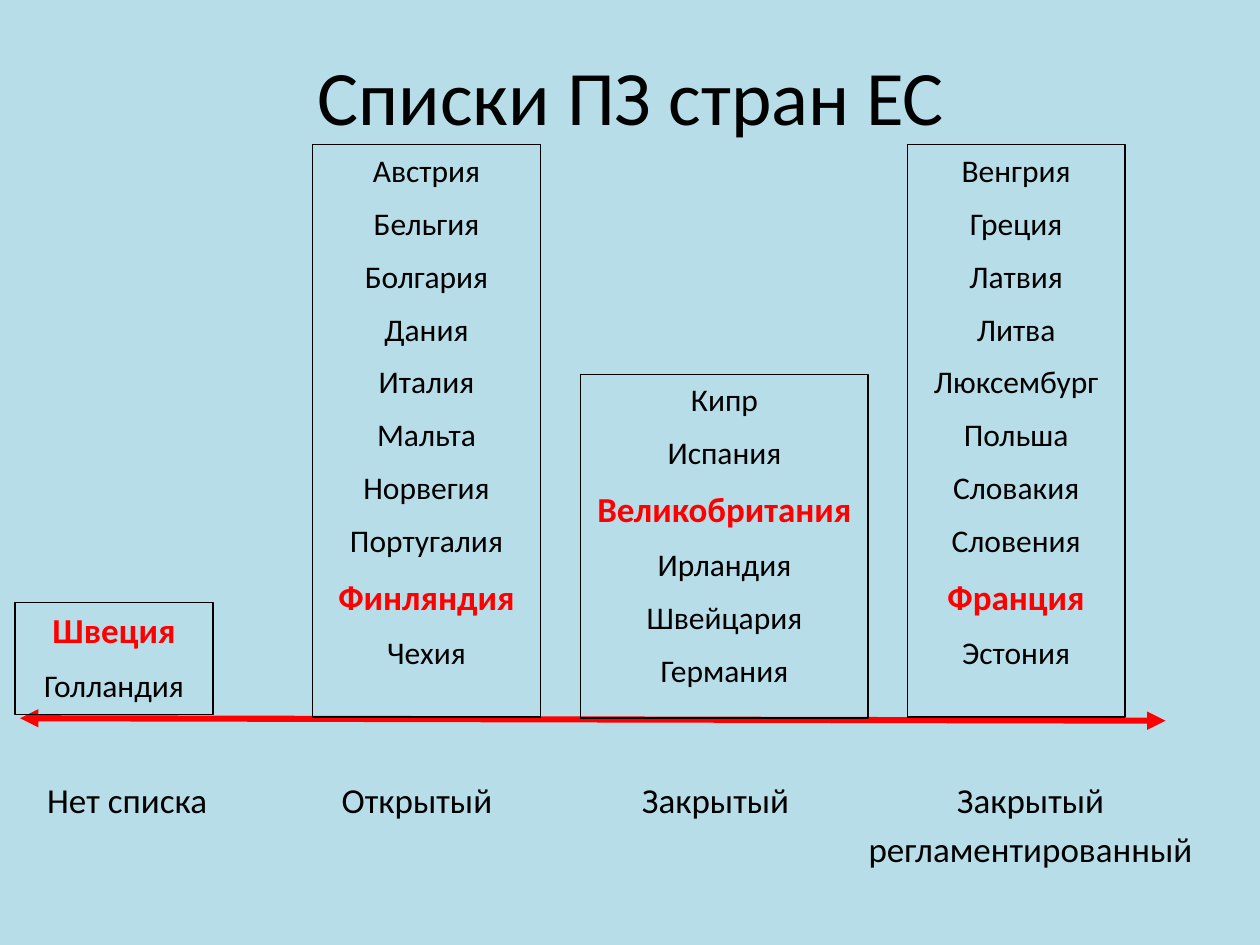
from dataclasses import dataclass

from lxml.etree import SubElement
from pptx import Presentation
from pptx.dml.color import RGBColor
from pptx.enum.shapes import MSO_CONNECTOR, MSO_SHAPE
from pptx.enum.text import MSO_ANCHOR, PP_ALIGN
from pptx.oxml.ns import qn
from pptx.util import Inches, Pt


@dataclass(frozen=True)
class Theme:
    font: str = "Calibri"
    background: RGBColor = RGBColor(0xB7, 0xDE, 0xE8)
    ink: RGBColor = RGBColor(0, 0, 0)
    accent: RGBColor = RGBColor(0xFF, 0, 0)
    title: int = 44
    label: int = 20
    country: int = 18
    highlight: int = 20
    border: float = 0.75
    axis: float = 3.5


THEME = Theme()
HIGHLIGHTED = {"Швеция", "Финляндия", "Великобритания", "Франция"}

# Left, top, width, height of each box, then its countries
COLUMNS = [
    (0.12, 4.78, 1.57, 0.89, ["Швеция", "Голландия"]),
    (2.48, 1.15, 1.81, 4.54,
     ["Австрия", "Бельгия", "Болгария", "Дания", "Италия", "Мальта",
      "Норвегия", "Португалия", "Финляндия", "Чехия"]),
    (7.2, 1.15, 1.73, 4.54,
     ["Венгрия", "Греция", "Латвия", "Литва", "Люксембург", "Польша",
      "Словакия", "Словения", "Франция", "Эстония"]),
    (4.61, 2.97, 2.28, 2.73,
     ["Кипр", "Испания", "Великобритания", "Ирландия", "Швейцария",
      "Германия"]),
]

# Centre of each axis label, then its lines
LABELS = [
    (1.01, ["Нет списка"]),
    (3.31, ["Открытый"]),
    (5.68, ["Закрытый"]),
    (8.18, ["Закрытый", "регламентированный"]),
]


def add_line(tf, text, first=False, size=18, color=THEME.ink, bold=False,
             gap=0.0):
    """Add a centred paragraph; gap is the space before, in type sizes."""
    p = tf.paragraphs[0] if first else tf.add_paragraph()
    p.alignment = PP_ALIGN.CENTER
    p.space_before = Pt(0 if first else round(gap * size, 1))
    r = p.add_run()
    r.text = text
    r.font.name = THEME.font
    r.font.size = Pt(size)
    r.font.bold = bold
    r.font.color.rgb = color


def add_text(s, left, top, width, height, lines, size,
             anchor=MSO_ANCHOR.TOP):
    box = s.shapes.add_textbox(Inches(left), Inches(top),
                               Inches(width), Inches(height))
    tf = box.text_frame
    tf.word_wrap = True
    tf.vertical_anchor = anchor
    for i, text in enumerate(lines):
        add_line(tf, text, first=i == 0, size=size, gap=0.2)


def add_axis(s, x1, y1, x2, y2):
    axis = s.shapes.add_connector(MSO_CONNECTOR.STRAIGHT, Inches(x1),
                                  Inches(y1), Inches(x2), Inches(y2))
    axis.line.color.rgb = THEME.accent
    axis.line.width = Pt(THEME.axis)
    ln = axis.line._get_or_add_ln()
    for end in ("a:headEnd", "a:tailEnd"):
        SubElement(ln, qn(end), type="triangle")
    SubElement(axis._element.spPr, qn("a:effectLst"))


def add_column(s, left, top, width, height, countries):
    sp = s.shapes.add_shape(MSO_SHAPE.RECTANGLE, Inches(left), Inches(top),
                            Inches(width), Inches(height))
    sp.shadow.inherit = False
    sp.fill.background()
    sp.line.color.rgb = THEME.ink
    sp.line.width = Pt(THEME.border)
    tf = sp.text_frame
    tf.word_wrap = False
    tf.vertical_anchor = MSO_ANCHOR.TOP
    for i, name in enumerate(countries):
        marked = name in HIGHLIGHTED
        add_line(tf, name, first=i == 0, bold=marked, gap=0.48,
                 size=THEME.highlight if marked else THEME.country,
                 color=THEME.accent if marked else THEME.ink)


def main():
    prs = Presentation()
    prs.slide_width, prs.slide_height = Inches(10), Inches(7.5)
    s = prs.slides.add_slide(prs.slide_layouts[6])
    s.background.fill.solid()
    s.background.fill.fore_color.rgb = THEME.background

    # Title
    add_text(s, 0.51, 0.13, 9, 1.25, ["Списки ПЗ стран ЕС"], THEME.title,
             anchor=MSO_ANCHOR.MIDDLE)

    # Labels under the axis
    for center, lines in LABELS:
        width = 3 if len(lines) > 1 else 2
        add_text(s, center - width / 2, 6.13, width, 0.9, lines, THEME.label)

    # Axis and the country lists standing on it
    add_axis(s, 0.16, 5.7, 9.25, 5.72)
    for column in COLUMNS:
        add_column(s, *column)

    prs.save("out.pptx")


if __name__ == "__main__":
    main()
